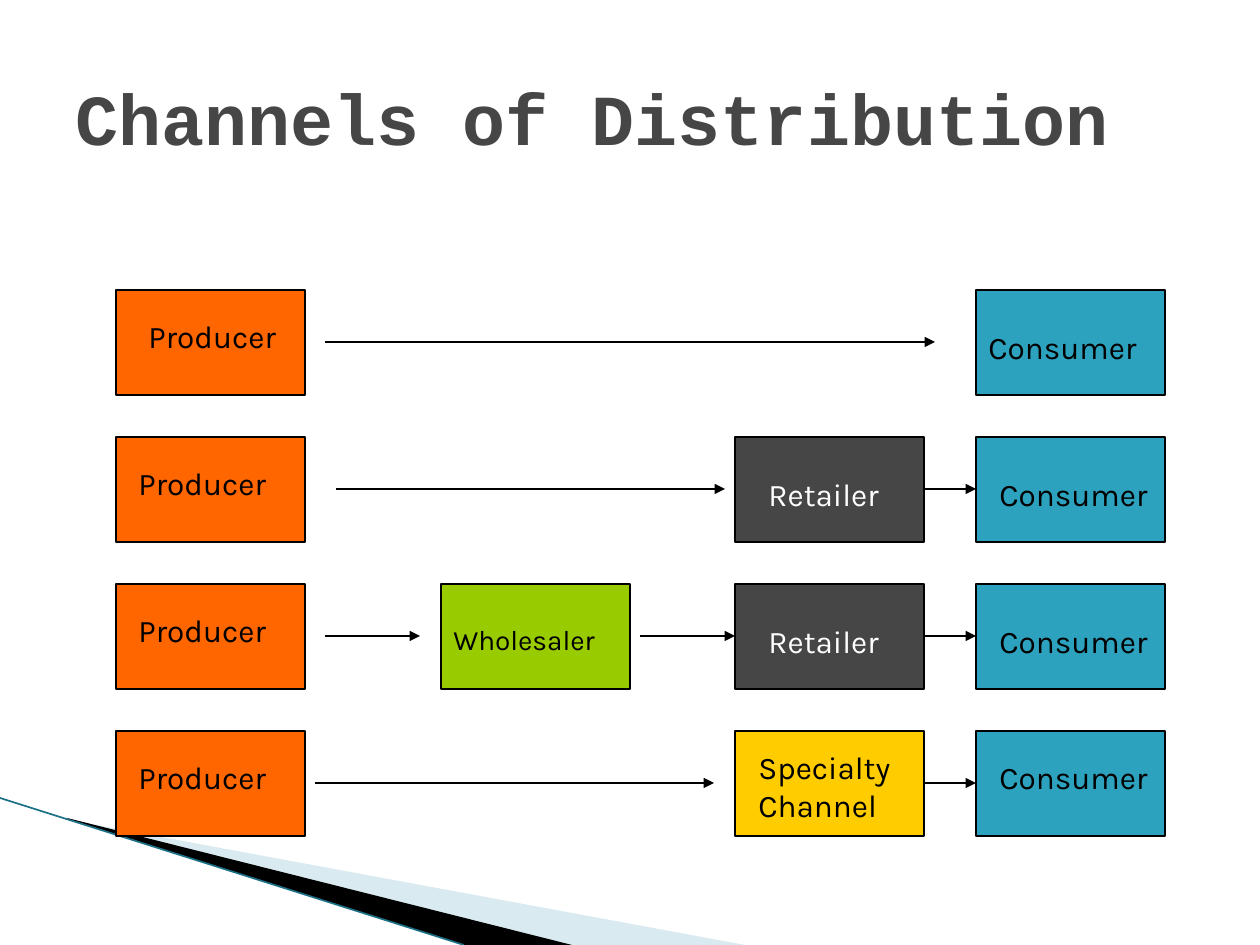
from typing import NamedTuple

from lxml.etree import SubElement
from pptx import Presentation
from pptx.dml.color import RGBColor
from pptx.enum.shapes import MSO_CONNECTOR as Connector, MSO_SHAPE as Shape
from pptx.enum.text import MSO_ANCHOR as Anchor
from pptx.oxml.ns import qn
from pptx.util import Emu, Pt

PX_PER_INCH = 126
SLIDE_W, SLIDE_H = 1260, 945
BOX_W, BOX_H = 189, 105
FIRST_ROW, ROW_STEP = 290, 147
PRODUCER_X, WHOLESALER_X, RETAILER_X, CONSUMER_X = 116, 441, 735, 976
BLACK, WHITE = "000000", "FFFFFF"


class Label(NamedTuple):
    text: str
    x: int
    dy: int
    w: int
    h: int = 50
    size: int = 18
    color: str = BLACK


class Stage(NamedTuple):
    x: int
    fill: str
    label: Label


class Arrow(NamedTuple):
    start: int
    end: int


class Channel(NamedTuple):
    stages: list[Stage]
    arrows: list[Arrow]


class Wedge(NamedTuple):
    points: list[tuple[int, int]]
    fill: str
    opacity: int


def px(length: int) -> Emu:
    return Emu(round(length * 914400 / PX_PER_INCH))


def rgb(color: str) -> RGBColor:
    return RGBColor.from_string(color)


def producer(label_x: int = 126) -> Stage:
    return Stage(PRODUCER_X, "FF6600", Label("Producer", label_x, 21, 158))


def consumer(label_x: int = 987, dy: int = 32) -> Stage:
    return Stage(CONSUMER_X, "2DA2BF", Label("Consumer", label_x, dy, 179))


RETAILER = Stage(RETAILER_X, "464646", Label("Retailer", 756, 32, 158, color=WHITE))
WHOLESALER = Stage(WHOLESALER_X, "99CC00",
                   Label("Wholesaler", WHOLESALER_X, 32, 179, 47, 16))
SPECIALTY = Stage(RETAILER_X, "FFCC00", Label("Specialty Channel", 746, 11, 179, 88))
TO_CONSUMER = Arrow(RETAILER_X + BOX_W, CONSUMER_X)

CHANNELS = [
    Channel([producer(136), consumer(CONSUMER_X)], [Arrow(325, 935)]),
    Channel([producer(), RETAILER, consumer()], [Arrow(336, 725), TO_CONSUMER]),
    Channel([producer(), WHOLESALER, RETAILER, consumer()],
            [Arrow(325, 420), Arrow(640, RETAILER_X), TO_CONSUMER]),
    Channel([producer(), SPECIALTY, consumer(dy=21)], [Arrow(315, 714), TO_CONSUMER]),
]

WEDGES = [
    Wedge([(69, 820), (745, SLIDE_H), (570, SLIDE_H), (69, 819)], "A0CBDC", 40),
    Wedge([(67, 818), (572, SLIDE_H), (464, SLIDE_H), (68, 819)], BLACK, 100),
]


def draw_line(shapes, start: tuple[int, int], end: tuple[int, int], color: str,
              width: float, arrowhead: bool = False) -> None:
    line = shapes.add_connector(Connector.STRAIGHT, *map(px, start + end))
    line.line.color.rgb = rgb(color)
    line.line.width = Pt(width)
    if arrowhead:
        SubElement(line.line._get_or_add_ln(), qn("a:tailEnd"), type="triangle")
    SubElement(line._element.spPr, qn("a:effectLst"))


def draw_wedge(shapes, wedge: Wedge) -> None:
    first, *others = [(px(x), px(y)) for x, y in wedge.points]
    outline = shapes.build_freeform(*first)
    outline.add_line_segments(others)
    shape = outline.convert_to_shape()
    shape.shadow.inherit = False
    shape.fill.solid()
    shape.fill.fore_color.rgb = rgb(wedge.fill)
    shape.line.fill.background()
    if wedge.opacity < 100:
        color = shape._element.spPr.find(".//" + qn("a:srgbClr"))
        SubElement(color, qn("a:alpha"), val=str(wedge.opacity * 1000))


def draw_title(shapes, text: str) -> None:
    frame = shapes.add_textbox(px(63), px(38), px(1134), px(158)).text_frame
    frame.word_wrap = True
    frame.vertical_anchor = Anchor.MIDDLE
    title = frame.paragraphs[0]
    title.text = text
    title.font.name = "Courier New"
    title.font.size = Pt(41)
    title.font.bold = True
    title.font.color.rgb = rgb("464646")


def draw_box(shapes, stage: Stage, top: int) -> None:
    box = shapes.add_shape(Shape.RECTANGLE, px(stage.x), px(top), px(BOX_W), px(BOX_H))
    box.shadow.inherit = False
    box.fill.solid()
    box.fill.fore_color.rgb = rgb(stage.fill)
    box.line.color.rgb = rgb(BLACK)
    box.line.width = Pt(0.75)


def draw_label(shapes, label: Label, top: int) -> None:
    frame = shapes.add_textbox(px(label.x), px(top + label.dy),
                               px(label.w), px(label.h)).text_frame
    frame.word_wrap = True
    name = frame.paragraphs[0]
    name.text = label.text
    name.font.name = "Karla"
    name.font.size = Pt(label.size)
    name.font.color.rgb = rgb(label.color)


def draw_channel(shapes, channel: Channel, top: int) -> None:
    """Draw one row as a group: boxes, then arrows, then labels."""
    row = shapes.add_group_shape().shapes
    middle = top + BOX_H // 2
    for stage in channel.stages:
        draw_box(row, stage, top)
    for arrow in channel.arrows:
        draw_line(row, (arrow.start, middle), (arrow.end, middle), BLACK, 0.75, True)
    for stage in channel.stages:
        draw_label(row, stage.label, top)


def main() -> None:
    deck = Presentation()
    deck.slide_width, deck.slide_height = px(SLIDE_W), px(SLIDE_H)
    shapes = deck.slides.add_slide(deck.slide_layouts[6]).shapes
    for wedge in WEDGES:
        draw_wedge(shapes, wedge)
    draw_line(shapes, (0, 798), (464, SLIDE_H), "1C7086", 0.95)
    draw_title(shapes, "Channels of Distribution")
    for index, channel in enumerate(CHANNELS):
        draw_channel(shapes, channel, FIRST_ROW + index * ROW_STEP)
    deck.save("out.pptx")


if __name__ == "__main__":
    main()
